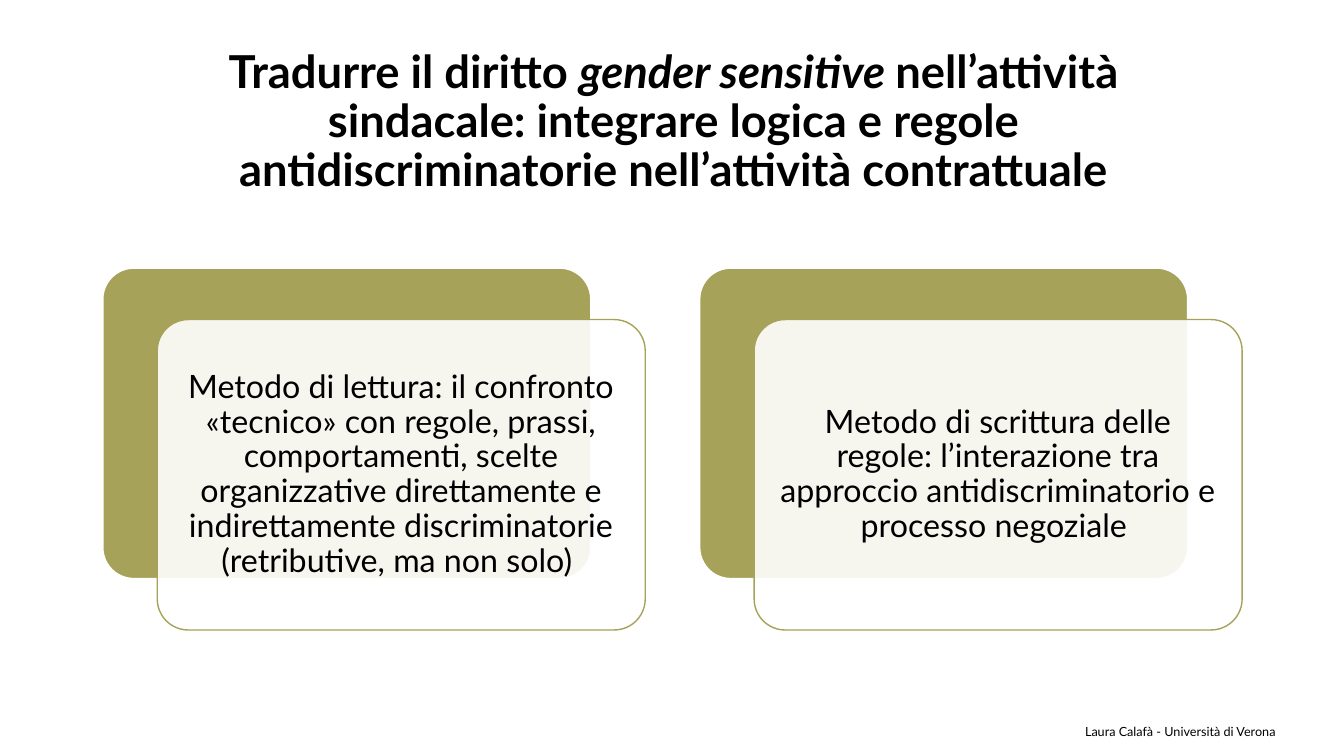
from lxml.etree import SubElement
from pptx import Presentation
from pptx.dml.color import RGBColor
from pptx.enum.shapes import MSO_SHAPE
from pptx.enum.text import MSO_ANCHOR, MSO_AUTO_SIZE, PP_ALIGN
from pptx.oxml.ns import qn
from pptx.util import Inches, Pt

BLACK = RGBColor(0x00, 0x00, 0x00)
WHITE = RGBColor(0xFF, 0xFF, 0xFF)
OLIVE = RGBColor(0xA7, 0xA2, 0x59)
FONT = "Lato"

TITLE = [
    ("Tradurre il diritto ", False),
    ("gender sensitive ", True),
    ("nell’attività sindacale: integrare logica e regole "
     "antidiscriminatorie nell’attività contrattuale", False),
]
METHODS = [
    "Metodo di lettura: il confronto «tecnico» con regole, prassi, "
    "comportamenti, scelte organizzative direttamente e indirettamente "
    "discriminatorie (retributive, ma non solo) ",
    "Metodo di scrittura delle regole: l’interazione tra approccio "
    "antidiscriminatorio e processo negoziale ",
]
CREDIT = "Laura Calafà - Università di Verona "

CARD_WIDTH, CARD_HEIGHT = 4.84, 3.08
CARD_SHIFT_X, CARD_SHIFT_Y = 0.54, 0.51
METHOD_PITCH = 5.92


def style(paragraph, size, align, bold=False):
    paragraph.alignment = align
    font = paragraph.font
    font.name, font.size, font.bold = FONT, Pt(size), bold
    font.color.rgb = BLACK


def add_title(slide, left, top, width, height):
    title = slide.shapes.title
    title.left, title.top = Inches(left), Inches(top)
    title.width, title.height = Inches(width), Inches(height)
    frame = title.text_frame
    frame.word_wrap = True
    frame.auto_size = MSO_AUTO_SIZE.NONE
    frame.vertical_anchor = MSO_ANCHOR.MIDDLE
    heading = frame.paragraphs[0]
    style(heading, 32.4, PP_ALIGN.CENTER, bold=True)
    heading.line_spacing = 0.9
    for words, italic in TITLE:
        run = heading.add_run()
        run.text = words
        run.font.italic = italic


def add_panel(slide, left, top, fill, line):
    panel = slide.shapes.add_shape(
        MSO_SHAPE.ROUNDED_RECTANGLE, Inches(left), Inches(top),
        Inches(CARD_WIDTH), Inches(CARD_HEIGHT))
    panel.adjustments[0] = 0.1
    panel.shadow.inherit = False
    panel.fill.solid()
    panel.fill.fore_color.rgb = fill
    panel.line.color.rgb = line
    panel.line.width = Pt(1)
    return panel


def add_method(slide, left, top, text):
    # Olive panel behind, translucent card in front
    add_panel(slide, left, top, OLIVE, WHITE)
    card = add_panel(slide, left + CARD_SHIFT_X, top + CARD_SHIFT_Y, WHITE, OLIVE)
    color = card.fill._xPr.find(qn("a:solidFill"))[0]
    SubElement(color, qn("a:alpha"), val="90000")

    frame = card.text_frame
    frame.word_wrap = True
    frame.vertical_anchor = MSO_ANCHOR.MIDDLE
    frame.margin_left = frame.margin_right = Inches(0.1)
    frame.margin_top = frame.margin_bottom = Inches(0.1)
    method = frame.paragraphs[0]
    method.text = text
    style(method, 23, PP_ALIGN.CENTER)
    method.line_spacing = 0.9


def add_credit(slide, left, top, width, height):
    box = slide.shapes.add_textbox(
        Inches(left), Inches(top), Inches(width), Inches(height))
    frame = box.text_frame
    frame.word_wrap = True
    frame.vertical_anchor = MSO_ANCHOR.MIDDLE
    credit = frame.paragraphs[0]
    credit.text = CREDIT
    style(credit, 9, PP_ALIGN.RIGHT)
    credit.space_after = Pt(6)


def main():
    deck = Presentation()
    deck.slide_width, deck.slide_height = Inches(13.33), Inches(7.5)
    slide = deck.slides.add_slide(deck.slide_layouts[5])
    add_title(slide, 1.67, 0.6, 10.02, 1.24)
    add_credit(slide, 9.71, 7.06, 3.07, 0.4)
    for column, text in enumerate(METHODS):
        add_method(slide, 1.02 + column * METHOD_PITCH, 2.66, text)
    deck.save("out.pptx")


if __name__ == "__main__":
    main()
